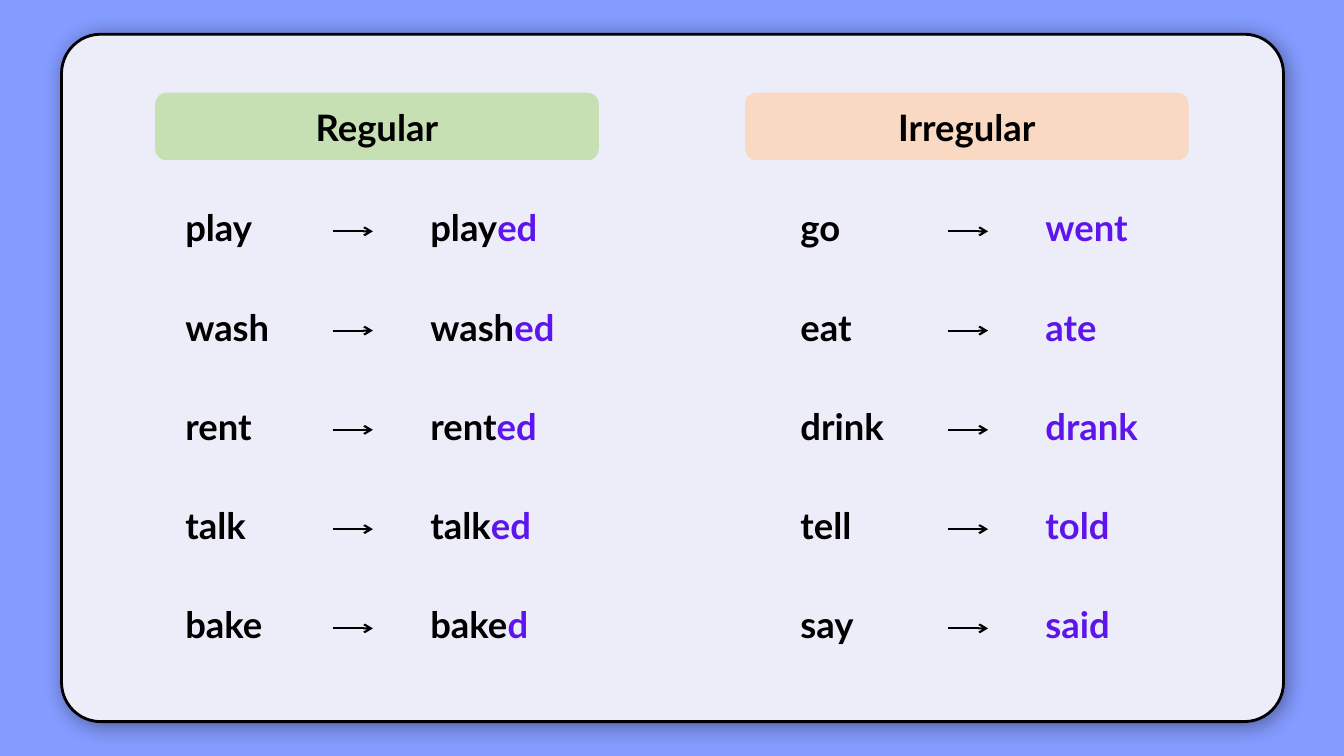
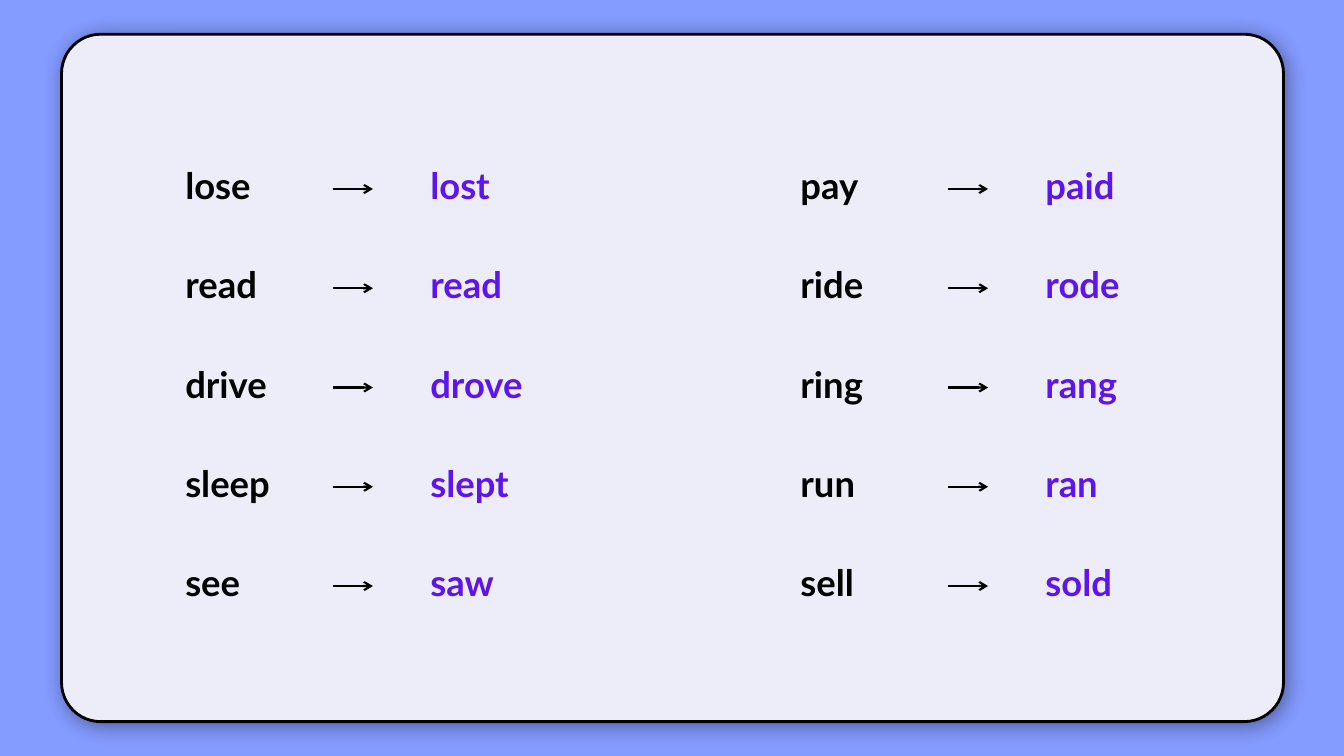
"""Build two slides of verbs and their past forms."""
from lxml import etree
from pptx import Presentation
from pptx.dml.color import RGBColor
from pptx.enum.shapes import MSO_CONNECTOR, MSO_SHAPE
from pptx.enum.text import MSO_ANCHOR, MSO_AUTO_SIZE, PP_ALIGN
from pptx.oxml.ns import qn
from pptx.util import Inches, Pt

ROUND = MSO_SHAPE.ROUNDED_RECTANGLE
STRAIGHT = MSO_CONNECTOR.STRAIGHT
MIDDLE = MSO_ANCHOR.MIDDLE
GROW = MSO_AUTO_SIZE.SHAPE_TO_FIT_TEXT
CENTER = PP_ALIGN.CENTER

WIDTH, HEIGHT = 13.33, 7.5
CELLS = 100

COLOURS = {
    "back": "849BFF",
    "panel": "EDEDF9",
    "ink": "000000",
    "accent": "5D15EB",
    "green": "C6E0B4",
    "peach": "FAD9C2",
}
FONT = {"name": "Lato", "size": Pt(26), "bold": True}
FRAME = {"word_wrap": True, "auto_size": GROW}
SHADE = {"blurRad": Pt(15), "dist": Pt(3), "dir": 45 * 60000,
         "algn": "tl", "rotWithShape": 0}

PANEL = (4.58, 4.53, 90.92, 90.93)
SIDES = (13.05, 58.82)
HEADS = (("Regular", "green", 11.55), ("Irregular", "peach", 55.44))
HEAD_TOP, HEAD_WIDE, HEAD_HIGH = 12.27, 33, 8.93
WORD_WIDE, PAST_WIDE, WORD_HIGH = 11, 13, 7.2
PAST_GAP, ARROW_GAP, ARROW_WIDE, ARROW_DROP = 18.23, 11.7, 3, 4.07
PITCH = 13.13

PAGES = (
    (26.53, HEADS, (
        "play play+ed, wash wash+ed, rent rent+ed, talk talk+ed, bake bake+d",
        "go +went, eat +ate, drink +drank, tell +told, say +said")),
    (20.93, (), (
        "lose +lost, read +read, drive +drove, sleep +slept, see +saw",
        "pay +paid, ride +rode, ring +rang, run +ran, sell +sold")),
)


def put(item, values):
    """Set each named value on the item."""
    for name, value in values.items():
        setattr(item, name, value)


def paint(fill, colour):
    """Fill with one solid colour of the palette."""
    fill.solid()
    fill.fore_color.rgb = RGBColor.from_string(COLOURS[colour])


class Deck:
    """Hold the style and the current slide."""

    def __init__(self):
        """Start an empty deck on the grid."""
        self.show = Presentation()
        put(self.show, {"slide_width": Inches(WIDTH),
                        "slide_height": Inches(HEIGHT)})
        self.slide = None

    def grid(self, *cells):
        """Turn columns and rows, in turn, into lengths."""
        sizes = (self.show.slide_width, self.show.slide_height)
        return [round(cell * sizes[i % 2] / CELLS)
                for i, cell in enumerate(cells)]

    def page(self):
        """Add a slide with its backdrop and panel."""
        self.slide = self.show.slides.add_slide(self.show.slide_layouts[6])
        paint(self.slide.background.fill, "back")
        panel = self.card(PANEL, "panel")
        panel.adjustments[0] = 0.057
        paint(panel.line.fill, "ink")
        panel.line.width = Pt(2)
        self.shade(panel)

    def card(self, place, colour):
        """Add a flat rounded card."""
        card = self.slide.shapes.add_shape(ROUND, *self.grid(*place))
        card.shadow.inherit = False
        paint(card.fill, colour)
        card.line.fill.background()
        return card

    def shade(self, card):
        """Give a card a soft dark shadow."""
        effect = card._element.spPr.find(qn("a:effectLst"))
        shadow = etree.SubElement(effect, qn("a:outerShdw"))
        for name, value in SHADE.items():
            shadow.set(name, str(value))
        tint = etree.SubElement(shadow, qn("a:srgbClr"), val=COLOURS["ink"])
        etree.SubElement(tint, qn("a:alpha"), val="40000")

    def label(self, frame, parts):
        """Add runs of text, each in its colour."""
        line = frame.paragraphs[0]
        for text, colour in parts:
            if text:
                run = line.add_run()
                run.text = text
                put(run.font, FONT)
                paint(run.font.fill, colour)
        return line

    def head(self, text, colour, left):
        """Add a column heading on a card."""
        card = self.card((left, HEAD_TOP, HEAD_WIDE, HEAD_HIGH), colour)
        card.text_frame.vertical_anchor = MIDDLE
        self.label(card.text_frame, [(text, "ink")]).alignment = CENTER

    def word(self, left, top, wide, parts):
        """Add a word in a text box."""
        box = self.slide.shapes.add_textbox(
            *self.grid(left, top, wide, WORD_HIGH))
        put(box.text_frame, FRAME)
        self.label(box.text_frame, parts)

    def arrow(self, left, top):
        """Add a short arrow to the right."""
        line = self.slide.shapes.add_connector(
            STRAIGHT, *self.grid(left, top, left + ARROW_WIDE, top))
        paint(line.line.fill, "ink")
        line.line.width = Pt(1.5)
        form = line._element.spPr
        etree.SubElement(form.find(qn("a:ln")), qn("a:tailEnd"), type="arrow")
        etree.SubElement(form, qn("a:effectLst"))

    def pair(self, left, top, verb, past):
        """Add a verb, an arrow and the past form."""
        stem, end = past.split("+")
        self.word(left, top, WORD_WIDE, [(verb, "ink")])
        self.word(left + PAST_GAP, top, PAST_WIDE,
                  [(stem, "ink"), (end, "accent")])
        self.arrow(left + ARROW_GAP, top + ARROW_DROP)


def main():
    """Build and save the deck."""
    deck = Deck()
    for top, heads, lists in PAGES:
        deck.page()
        for head in heads:
            deck.head(*head)
        for left, verbs in zip(SIDES, lists):
            for row, pair in enumerate(verbs.split(", ")):
                deck.pair(left, top + row * PITCH, *pair.split())
    deck.show.save("out.pptx")


if __name__ == "__main__":
    main()
